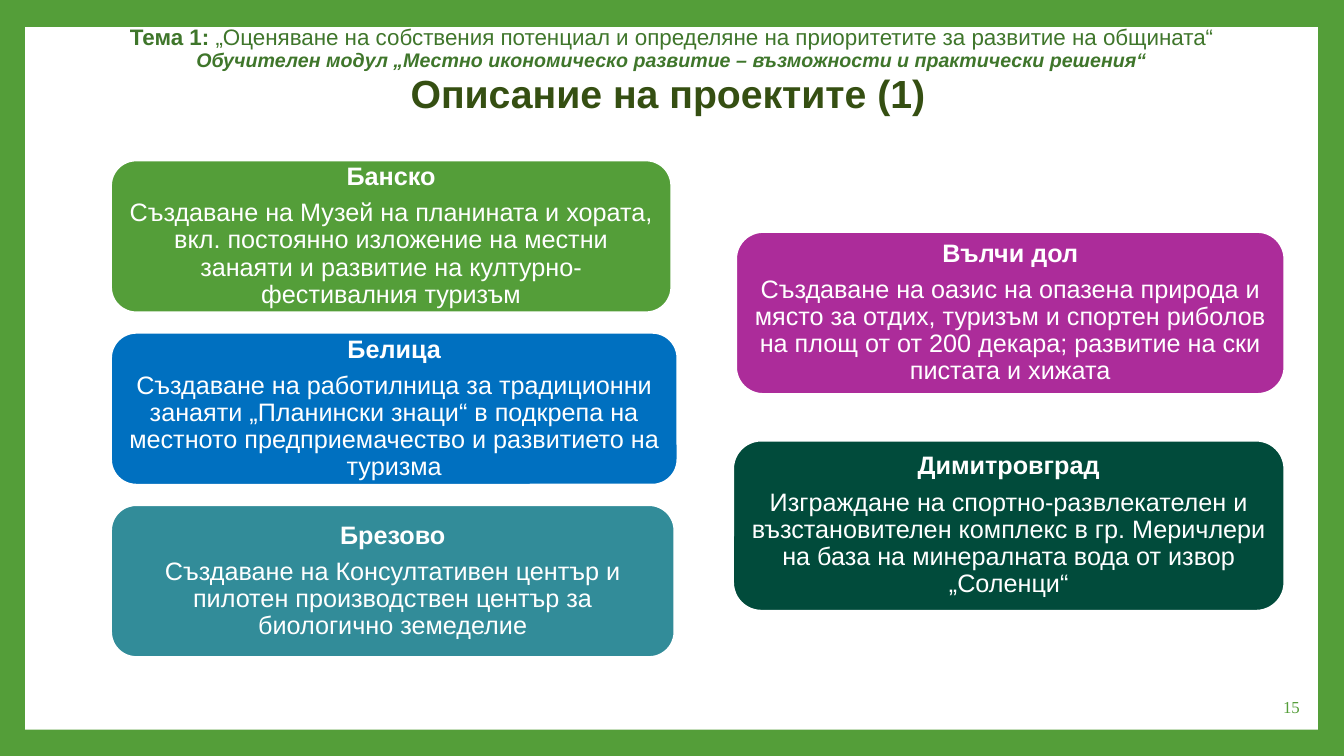
from pptx import Presentation
from pptx.dml.color import RGBColor
from pptx.enum.shapes import MSO_SHAPE
from pptx.enum.text import MSO_ANCHOR, PP_ALIGN
from pptx.util import Inches, Pt

RECT, ROUND = MSO_SHAPE.RECTANGLE, MSO_SHAPE.ROUNDED_RECTANGLE
TOP, MIDDLE = MSO_ANCHOR.TOP, MSO_ANCHOR.MIDDLE
CENTER, RIGHT = PP_ALIGN.CENTER, PP_ALIGN.RIGHT

THEME = {
    "green": "549E39", "white": "FFFFFF", "blue": "0070C0",
    "teal": "328C99", "purple": "AC2C9A", "forest": "014B3B",
    "title": "354F12", "topic": "3F762B",
    "font": "Arial", "serif": "Times New Roman",
    "title_size": 28, "card_size": 18, "topic_size": 16,
    "module_size": 14, "page_size": 12,
}

TITLE = "Описание на проектите (1)"
TOPIC = ("Тема 1: ", "„Оценяване на собствения потенциал и определяне на приоритетите за развитие на общината“")
MODULE = "Обучителен модул „Местно икономическо развитие – възможности и практически решения“"
PAGE = "15"

LEFT_CARDS = [
    ("Банско", "Създаване на Музей на планината и хората, вкл. постоянно изложение на местни занаяти и развитие на културно-фестивалния туризъм", "green", 5.56),
    ("Белица", "Създаване на работилница за традиционни занаяти „Планински знаци“ в подкрепа на местното предприемачество и развитието на туризма", "blue", 5.62),
    ("Брезово", "Създаване на Консултативен център и пилотен производствен център за биологично земеделие", "teal", 5.59),
]
RIGHT_CARDS = [
    ("Вълчи дол", "Създаване на оазис на опазена природа и място за отдих, туризъм и спортен риболов на площ от от 200 декара; развитие на ски пистата и хижата", "purple", (7.3, 2.3, 5.44, 1.61)),
    ("Димитровград", "Изграждане на спортно-развлекателен и възстановителен комплекс в гр. Меричлери на база на минералната вода от извор „Соленци“", "forest", (7.27, 4.37, 5.47, 1.69)),
]
LEFT, FIRST, STEP, HEIGHT = 1.1, 1.59, 1.71, 1.51
INSET = 0.07


def color(name):
    return RGBColor.from_string(THEME[name])


def add_block(slide, kind, box, fill):
    shape = slide.shapes.add_shape(kind, *map(Inches, box))
    shape.shadow.inherit = False
    shape.fill.solid()
    shape.fill.fore_color.rgb = color(fill)
    shape.line.fill.background()
    return shape


def add_text(slide, box, anchor):
    frame = slide.shapes.add_textbox(*map(Inches, box)).text_frame
    frame.word_wrap = True
    frame.vertical_anchor = anchor
    return frame


def add_run(para, text, size, ink, bold=False, italic=False, face="font"):
    run = para.add_run()
    run.text = text
    font = run.font
    font.name, font.size = THEME[face], Pt(THEME[size])
    font.bold, font.italic = bold, italic
    font.color.rgb = color(ink)


def add_card(slide, name, text, fill, box):
    card = add_block(slide, ROUND, box, fill)
    card.line.color.rgb = color("white")
    card.line.width = Pt(1.5)
    frame = card.text_frame
    frame.word_wrap = True
    frame.vertical_anchor = MIDDLE
    frame.margin_left = frame.margin_right = Inches(INSET)
    frame.margin_top = frame.margin_bottom = Inches(INSET)
    for para, line, bold in ((frame.paragraphs[0], name, True), (frame.add_paragraph(), text, False)):
        para.alignment = CENTER
        para.line_spacing = 0.9
        para.space_after = Pt(6.3)
        add_run(para, line, "card_size", "white", bold)


def main():
    deck = Presentation()
    deck.slide_width, deck.slide_height = Inches(13.33), Inches(7.5)
    slide = deck.slides.add_slide(deck.slide_layouts[6])
    slide.background.fill.solid()
    slide.background.fill.fore_color.rgb = color("green")
    add_block(slide, RECT, (0.25, 0.27, 12.82, 6.97), "white")

    page = add_text(slide, (11.12, 6.81, 1.87, 0.4), MIDDLE).paragraphs[0]
    page.alignment = RIGHT
    add_run(page, PAGE, "page_size", "green", face="serif")

    for row, (name, text, fill, width) in enumerate(LEFT_CARDS):
        add_card(slide, name, text, fill, (LEFT, FIRST + row * STEP, width, HEIGHT))
    for card in RIGHT_CARDS:
        add_card(slide, *card)

    title = add_text(slide, (1.31, 0.64, 10.63, 0.57), TOP).paragraphs[0]
    title.alignment = CENTER
    add_run(title, TITLE, "title_size", "title", True)

    head = add_text(slide, (0.37, 0.29, 12.59, 0.39), MIDDLE)
    topic, module = head.paragraphs[0], head.add_paragraph()
    for para in (topic, module):
        para.alignment = CENTER
        para.line_spacing = 0.9
    add_run(topic, TOPIC[0], "topic_size", "topic", True)
    add_run(topic, TOPIC[1], "topic_size", "topic")
    add_run(module, MODULE, "module_size", "topic", True, True)

    deck.save("out.pptx")


if __name__ == "__main__":
    main()
